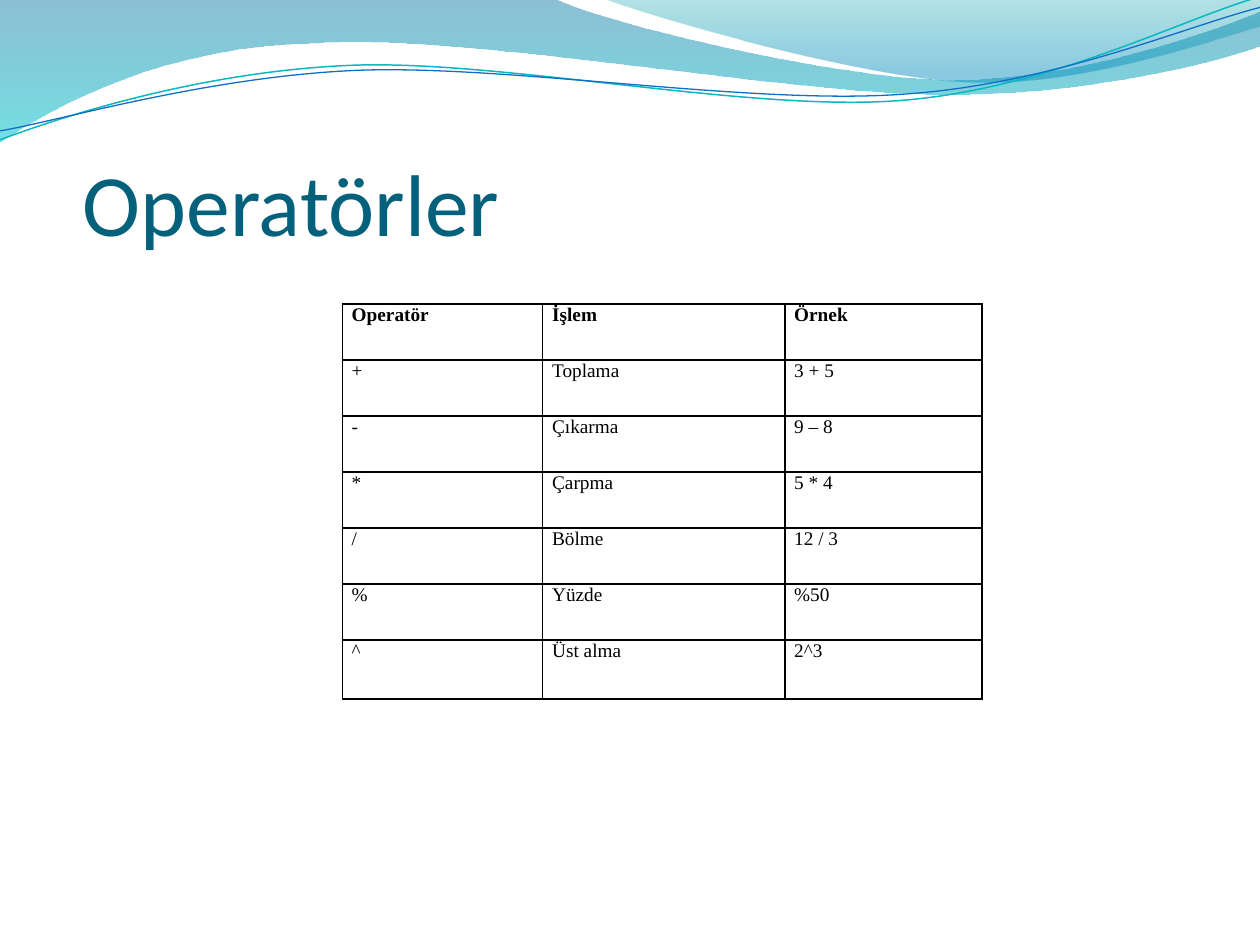
from dataclasses import dataclass
from math import cos, radians, sin

from lxml import etree
from pptx import Presentation
from pptx.dml.color import RGBColor
from pptx.enum.text import MSO_ANCHOR, PP_ALIGN
from pptx.oxml.ns import qn
from pptx.util import Cm, Pt

LEFT, JUSTIFY = PP_ALIGN.LEFT, PP_ALIGN.JUSTIFY
TOP, BOTTOM = MSO_ANCHOR.TOP, MSO_ANCHOR.BOTTOM
TITLE_ONLY = 5
LINE_TURN = 357.3


@dataclass(frozen=True)
class Theme:
    title_font: str = "Calibri"
    title_size: float = 50
    title_color: str = "04617B"
    table_font: str = "Times New Roman"
    table_size: float = 11
    ink: str = "000000"
    border_width: float = 1
    # Gradient stops: position, colour, opacity in percent
    wide_wave: tuple = ((0, "0074A1", 45), (1, "00C6CF", 55))
    right_wave: tuple = ((0, "00A1A9", 30), (0.8, "008BBF", 45))
    # Line colour and width
    teal_line: tuple = ("0AB8BF", 0.85)
    blue_line: tuple = ("0F6FC6", 0.75)


@dataclass(frozen=True)
class Outline:
    """Frame (left, top, width, height) and steps on the slide, in cm.

    A pair is a straight step, six numbers are a Bezier curve.
    """
    frame: tuple
    steps: tuple
    turn: float = 0
    closed: bool = True


THEME = Theme()

WIDE_WAVE = Outline((-0.03, -0.03, 25.46, 2.9), (
    (0, 0), (11.18, -0.03),
    (12.09, 0.43, 16.87, 1.6, 19.25, 1.6),
    (21.67, 1.6, 24.33, 0.66, 25.4, 0.23), (25.43, 0.91),
    (24.97, 1.12, 22.1, 1.93, 18.95, 1.9),
    (15.8, 1.9, 9.7, 0.71, 6.53, 0.86),
    (3.25, 0.91, 1.17, 2.11, -0.03, 2.87), (0, 0),
))
RIGHT_WAVE = Outline((12.17, -0.03, 13.23, 1.78), (
    (12.17, -0.03),
    (12.93, 0.28, 17.32, 1.57, 19.53, 1.65),
    (21.74, 1.75, 24.41, 0.81, 25.4, 0.53), (25.4, 0), (12.17, -0.03),
))
TEAL_LINE = Outline((-0.05, 0.56, 25.45, 1.8), (
    (0, 2.82),
    (1.22, 2.36, 4.01, 1.45, 7.04, 1.32),
    (10.03, 1.19, 15.06, 2.26, 18.11, 2.03),
    (21.16, 1.8, 23.83, 0.38, 25.35, -0.05),
), LINE_TURN, closed=False)
BLUE_LINE = Outline((-0.05, 0.76, 25.48, 1.47), (
    (0, 2.64),
    (1.19, 2.44, 4.17, 1.55, 7.19, 1.42),
    (10.24, 1.3, 15.16, 2.13, 18.21, 1.9),
    (21.23, 1.7, 23.9, 0.53, 25.4, 0.15),
), LINE_TURN, closed=False)

OPERATORS = [
    ("Operatör", "İşlem", "Örnek"),
    ("+", "Toplama", "3 + 5"),
    ("-", "Çıkarma", "9 – 8"),
    ("*", "Çarpma", "5 * 4"),
    ("/", "Bölme", "12 / 3"),
    ("%", "Yüzde", "%50"),
    ("^", "Üst alma", "2^3"),
]
COLUMN_WIDTHS = (4.04, 4.88, 3.98)
ROW_HEIGHT, LAST_ROW_HEIGHT = 1.13, 1.19


def to_frame(outline, x, y):
    """Map a slide point into the unturned frame of its outline."""
    left, top, width, height = outline.frame
    angle = radians(-outline.turn)
    dx, dy = x - left - width / 2, y - top - height / 2
    return (Cm(width / 2 + dx * cos(angle) - dy * sin(angle)),
            Cm(height / 2 + dx * sin(angle) + dy * cos(angle)))


def add_outline(slide, outline):
    left, top, width, height = (Cm(length) for length in outline.frame)
    builder = slide.shapes.build_freeform(left, top)
    builder.add_line_segments([(left + width, top + height)], close=False)
    shape = builder.convert_to_shape()
    shape.left, shape.top, shape.width, shape.height = left, top, width, height
    shape.rotation = outline.turn
    shape.shadow.inherit = False

    # Write the steps as true curves
    drawing = next(shape.element.iter(qn("a:path")))
    for child in list(drawing):
        drawing.remove(child)
    drawing.set("w", str(width))
    drawing.set("h", str(height))
    for i, step in enumerate(outline.steps):
        kind = "a:moveTo" if i == 0 else "a:lnTo" if len(step) == 2 else "a:cubicBezTo"
        segment = etree.SubElement(drawing, qn(kind))
        for point in zip(step[::2], step[1::2]):
            x, y = to_frame(outline, *point)
            etree.SubElement(segment, qn("a:pt"), x=str(x), y=str(y))
    if outline.closed:
        etree.SubElement(drawing, qn("a:close"))
    return shape


def add_wave(slide, outline, stops):
    wave = add_outline(slide, outline)
    wave.line.fill.background()
    wave.fill.gradient()
    wave.fill.gradient_angle = 270
    for stop, (position, color, _) in zip(wave.fill.gradient_stops, stops):
        stop.position = position
        stop.color.rgb = RGBColor.from_string(color)
    for rgb, (_, _, opacity) in zip(wave.element.spPr.iter(qn("a:srgbClr")), stops):
        etree.SubElement(rgb, qn("a:alpha"), val=str(opacity * 1000))


def add_wave_line(slide, outline, stroke):
    color, width = stroke
    curve = add_outline(slide, outline)
    curve.fill.background()
    curve.line.color.rgb = RGBColor.from_string(color)
    curve.line.width = Pt(width)


def add_run(paragraph, text, font, size, color, bold=False):
    run = paragraph.add_run()
    run.text = text
    run.font.name = font
    run.font.size = Pt(size)
    run.font.bold = bold
    run.font.color.rgb = RGBColor.from_string(color)


def set_title(slide, text):
    title = slide.shapes.title
    title.left, title.top, title.width, title.height = Cm(1.27), Cm(1.95), Cm(22.86), Cm(3.18)
    frame = title.text_frame
    frame.vertical_anchor = BOTTOM
    frame.margin_left = frame.margin_right = frame.margin_bottom = 0
    frame.margin_top = Cm(0.13)
    frame.paragraphs[0].alignment = LEFT
    add_run(frame.paragraphs[0], text, THEME.title_font, THEME.title_size, THEME.title_color)
    # Bring the title in front of the waves
    slide.shapes.element.append(title.element)


def add_borders(cell):
    properties = cell._tc.get_or_add_tcPr()
    for side in ("a:lnL", "a:lnR", "a:lnT", "a:lnB"):
        border = etree.SubElement(properties, qn(side), w=str(Pt(THEME.border_width)))
        fill = etree.SubElement(border, qn("a:solidFill"))
        etree.SubElement(fill, qn("a:srgbClr"), val=THEME.ink)


def fill_cell(cell, text, bold):
    add_borders(cell)
    cell.fill.background()
    cell.margin_left = cell.margin_right = Cm(0.19)
    cell.margin_top = cell.margin_bottom = 0
    cell.vertical_anchor = TOP
    paragraph = cell.text_frame.paragraphs[0]
    paragraph.alignment = JUSTIFY
    add_run(paragraph, text, THEME.table_font, THEME.table_size, THEME.ink, bold)


def add_operator_table(slide):
    heights = [ROW_HEIGHT] * (len(OPERATORS) - 1) + [LAST_ROW_HEIGHT]
    table = slide.shapes.add_table(
        len(OPERATORS), len(COLUMN_WIDTHS), Cm(6.9), Cm(6.13),
        Cm(sum(COLUMN_WIDTHS)), Cm(sum(heights))).table
    table.horz_banding = False
    for column, width in zip(table.columns, COLUMN_WIDTHS):
        column.width = Cm(width)
    for r, (height, texts) in enumerate(zip(heights, OPERATORS)):
        table.rows[r].height = Cm(height)
        for c, text in enumerate(texts):
            fill_cell(table.cell(r, c), text, bold=r == 0)


def main():
    deck = Presentation()
    deck.slide_width, deck.slide_height = Cm(25.4), Cm(19.05)
    slide = deck.slides.add_slide(deck.slide_layouts[TITLE_ONLY])

    # Wave decoration along the top
    add_wave(slide, WIDE_WAVE, THEME.wide_wave)
    add_wave(slide, RIGHT_WAVE, THEME.right_wave)
    add_wave_line(slide, TEAL_LINE, THEME.teal_line)
    add_wave_line(slide, BLUE_LINE, THEME.blue_line)

    # Title and table
    set_title(slide, " Operatörler")
    add_operator_table(slide)
    deck.save("out.pptx")


if __name__ == "__main__":
    main()
